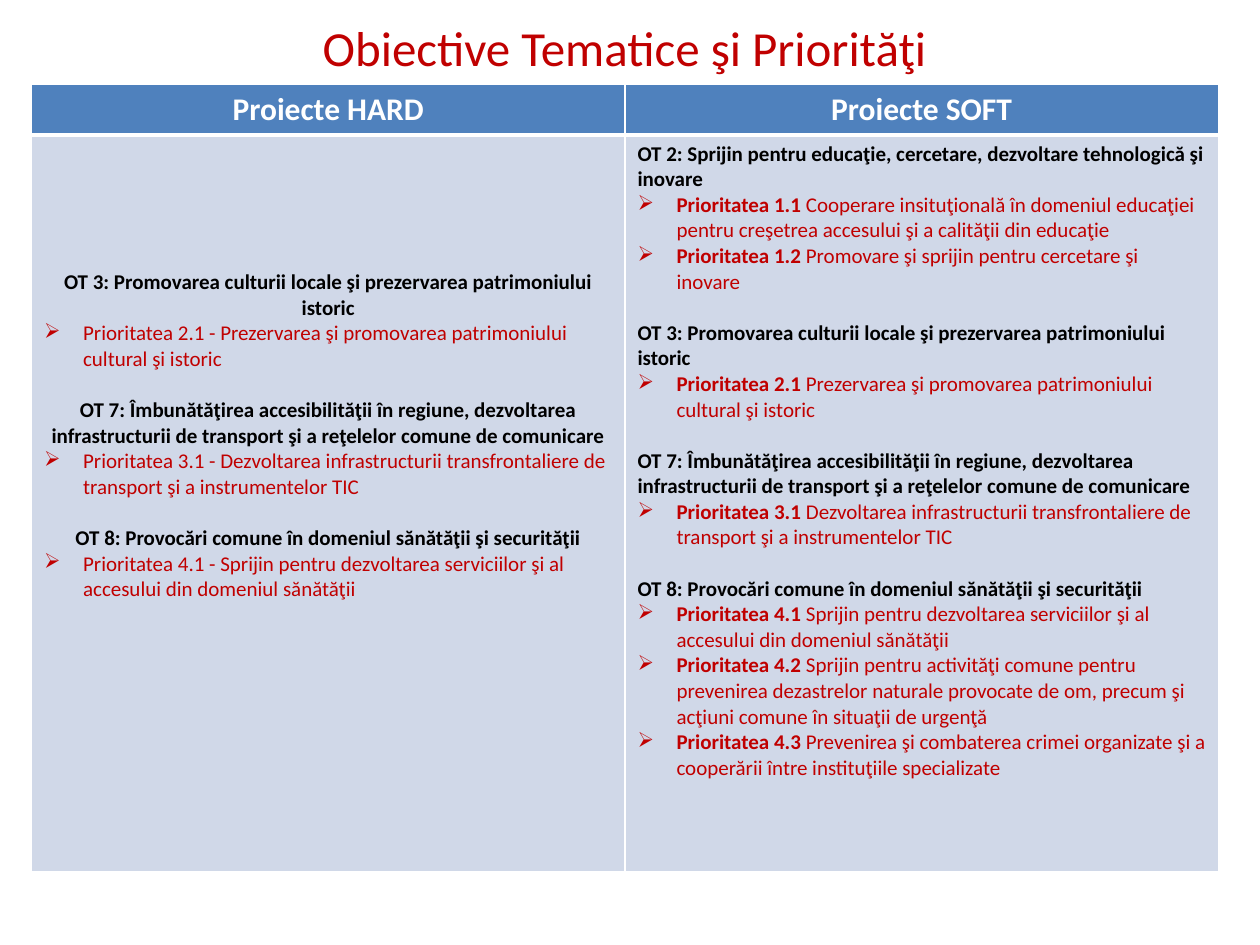
from dataclasses import dataclass

from lxml.etree import SubElement
from pptx import Presentation
from pptx.dml.color import RGBColor
from pptx.enum.text import MSO_ANCHOR, PP_ALIGN
from pptx.oxml.ns import qn
from pptx.util import Inches, Pt


@dataclass(frozen=True)
class Theme:
    """Colours, font and type sizes of the slide."""
    font: str = "Calibri"
    red: str = "C00000"
    black: str = "000000"
    white: str = "FFFFFF"
    header: str = "4F81BD"
    body: str = "D0D8E8"
    title_size: float = 28
    header_size: float = 18
    body_size: float = 12
    group_gap: float = 14.6


THEME = Theme()
TITLE = "Obiective Tematice şi Priorităţi "
HEADERS = ("Proiecte HARD", "Proiecte SOFT")
CULTURE = "OT 3: Promovarea culturii locale şi prezervarea patrimoniului istoric"
ACCESS = ("OT 7: Îmbunătăţirea accesibilităţii în regiune, dezvoltarea "
          "infrastructurii de transport şi a reţelelor comune de comunicare")
HEALTH = "OT 8: Provocări comune în domeniul sănătăţii şi securităţii"
HERITAGE = "Prezervarea şi promovarea patrimoniului cultural şi istoric"
TRANSPORT = ("Dezvoltarea infrastructurii transfrontaliere de transport "
             "şi a instrumentelor TIC")
SERVICES = "Sprijin pentru dezvoltarea serviciilor şi al accesului din domeniul sănătăţii"
HARD = (
    (CULTURE, (("2.1", HERITAGE),)),
    (ACCESS, (("3.1", TRANSPORT),)),
    (HEALTH, (("4.1", SERVICES),)),
)
SOFT = (
    ("OT 2: Sprijin pentru educaţie, cercetare, dezvoltare tehnologică şi inovare", (
        ("1.1", "Cooperare insituţională în domeniul educaţiei pentru creşetrea "
                "accesului şi a calităţii din educaţie"),
        ("1.2", "Promovare şi sprijin pentru cercetare şi inovare"),
    )),
    (CULTURE, (("2.1", HERITAGE),)),
    (ACCESS, (("3.1", TRANSPORT),)),
    (HEALTH, (
        ("4.1", SERVICES),
        ("4.2", "Sprijin pentru activităţi comune pentru prevenirea dezastrelor naturale "
                "provocate de om, precum şi acţiuni comune în situaţii de urgenţă"),
        ("4.3", "Prevenirea şi combaterea crimei organizate şi a cooperării între "
                "instituţiile specializate"),
    )),
)


def add_run(paragraph, text, size, color, bold=False):
    """Add one styled run to a paragraph."""
    run = paragraph.add_run()
    run.text = text
    run.font.name = THEME.font
    run.font.size = Pt(size)
    run.font.bold = bold
    run.font.color.rgb = RGBColor.from_string(color)


def next_paragraph(frame):
    """Return the first paragraph while it is empty, else a new one."""
    first = frame.paragraphs[0]
    return first if not first.runs else frame.add_paragraph()


def style_cell(cell, fill, top, bottom):
    """Give a cell white borders and a solid fill."""
    properties = cell._tc.get_or_add_tcPr()
    for side, width in (("L", 1), ("R", 1), ("T", top), ("B", bottom)):
        line = SubElement(properties, qn(f"a:ln{side}"), w=str(Pt(width)))
        solid = SubElement(line, qn("a:solidFill"))
        SubElement(solid, qn("a:srgbClr"), val=THEME.white)
    cell.fill.solid()
    cell.fill.fore_color.rgb = RGBColor.from_string(fill)


def make_bullet(paragraph):
    """Give a paragraph an arrow bullet with a hanging indent."""
    properties = paragraph._p.get_or_add_pPr()
    properties.set("marL", str(Inches(0.31)))
    properties.set("indent", str(-Inches(0.31)))
    SubElement(properties, qn("a:buChar"), char="➢")


def fill_objectives(cell, objectives, alignment, separator, bold_label):
    """Write the objectives and their bulleted priorities in a cell."""
    frame = cell.text_frame
    for index, (objective, priorities) in enumerate(objectives):
        paragraph = next_paragraph(frame)
        paragraph.alignment = alignment
        if index:
            paragraph.space_before = Pt(THEME.group_gap)
        add_run(paragraph, objective, THEME.body_size, THEME.black, True)
        for number, text in priorities:
            paragraph = next_paragraph(frame)
            paragraph.alignment = PP_ALIGN.LEFT
            make_bullet(paragraph)
            add_run(paragraph, f"Prioritatea {number}{separator}",
                    THEME.body_size, THEME.red, bold_label)
            add_run(paragraph, text, THEME.body_size, THEME.red)


def add_title(slide, left, top, width, height):
    """Place the centred slide title in its box."""
    frame = slide.shapes.add_textbox(left, top, width, height).text_frame
    frame.word_wrap = True
    frame.vertical_anchor = MSO_ANCHOR.MIDDLE
    paragraph = frame.paragraphs[0]
    paragraph.alignment = PP_ALIGN.CENTER
    add_run(paragraph, TITLE, THEME.title_size, THEME.red)


def add_objectives_table(slide, left, top, width, height):
    """Place the two-column table of project types in its box."""
    table = slide.shapes.add_table(2, len(HEADERS), left, top, width, height).table
    table.rows[0].height = Inches(0.4)
    table.rows[1].height = height - table.rows[0].height
    for column, header in enumerate(HEADERS):
        table.columns[column].width = width // len(HEADERS)
        cell = table.cell(0, column)
        style_cell(cell, THEME.header, 1, 3)
        paragraph = cell.text_frame.paragraphs[0]
        paragraph.alignment = PP_ALIGN.CENTER
        add_run(paragraph, header, THEME.header_size, THEME.white, True)
        style_cell(table.cell(1, column), THEME.body, 3, 1)
    hard, soft = table.cell(1, 0), table.cell(1, 1)
    hard.margin_top = Inches(1.07)
    fill_objectives(hard, HARD, PP_ALIGN.CENTER, " - ", False)
    fill_objectives(soft, SOFT, PP_ALIGN.LEFT, " ", True)


def main():
    """Build and save the slide."""
    presentation = Presentation()
    presentation.slide_width = Inches(10)
    presentation.slide_height = Inches(7.5)
    slide = presentation.slides.add_slide(presentation.slide_layouts[6])
    add_title(slide, Inches(0.5), Inches(0), Inches(9), Inches(0.75))
    add_objectives_table(slide, Inches(0.25), Inches(0.67), Inches(9.42), Inches(6.25))
    presentation.save("out.pptx")


if __name__ == "__main__":
    main()
